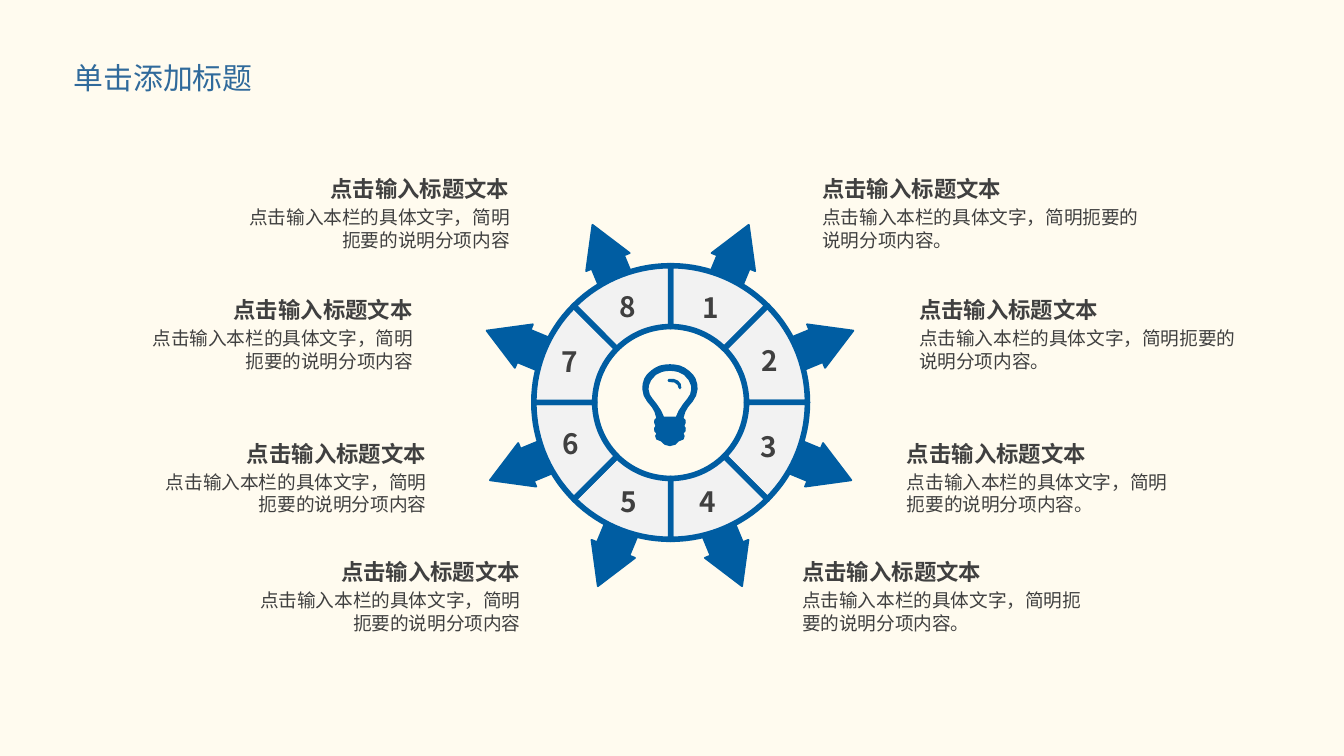
"""Build a slide with an eight-part idea wheel and a caption for each part."""
from math import cos, radians, sin

from lxml import etree
from pptx import Presentation
from pptx import util as u
from pptx.dml.color import RGBColor
from pptx.enum import text
from pptx.oxml.ns import qn

THEME = dict(font="Noto Sans CJK SC", paper="FFFBEF", blue="005DA2", title="306A9B",
             ring="F2F2F2", ink="404040", title_pt=16, head_pt=12, body_pt=10, num_pt=15)
COLS, ROWS = 100, 56.25
CELL = u.Inches(0.1)
CX, CY, INNER, OUTER = 49.9, 29.95, 5.65, 10.18
ARROW_CY = 30.17
HEAD, BODY = "点击输入标题文本", "点击输入本栏的具体文字，简明扼要的说明分项内容"
PARTS = [
    (60.2, 12.4, 26, 52.9, 22.9, 0.25), (67.4, 21.4, 26.7, 57.3, 26.8, 0.15),
    (66.5, 32.1, 22, 57.2, 33.2, 0), (58.7, 40.9, 23.8, 52.7, 37.3, -0.25),
    (17.6, 40.9, 22.1, 46.8, 37.3, 0.15), (11.1, 32.1, 21.6, 42.5, 33, 0),
    (10.1, 21.4, 21.6, 42.4, 26.9, -0.25), (17.3, 12.4, 21.6, 46.7, 22.8, -0.25),
]
ARROW = [(5.65, -1.3), (11.55, -1.3), (11.55, -1.75), (14.55, 0),
         (11.55, 1.75), (11.55, 1.3), (5.65, 1.3)]
BULB_X = 49.85
GLASS = [(0, 27.6), (0.3, 27.62), (0.6, 27.68), (1.05, 27.9), (1.4, 28.3), (1.57, 28.7),
         (1.58, 29), (1.5, 29.35), (1.3, 29.65), (0.95, 30.1), (0.65, 30.55), (0.45, 31)]
SHELL = [(0, 27.1), (0.4, 27.13), (0.75, 27.2), (1.1, 27.36), (1.4, 27.57), (1.7, 27.85),
         (1.9, 28.15), (2.03, 28.55), (2.06, 28.95), (1.95, 29.45), (1.7, 29.88),
         (1.35, 30.3), (1.15, 30.65), (1.02, 31.1), (1.16, 31.25), (1.18, 31.45),
         (1.08, 31.7), (1.18, 31.85), (1.16, 32.1), (1.02, 32.25), (1.1, 32.45),
         (1.02, 32.7), (0.65, 32.85), (0.4, 33.1), (0, 33.2)]
GLINT = [(49.75, 28.2), (50.15, 28.2), (50.45, 28.32), (50.65, 28.55), (50.7, 28.85),
         (50.6, 28.97), (50.48, 28.85), (50.42, 28.65), (50.2, 28.47), (49.75, 28.42),
         (49.67, 28.31)]


def draw(contours, fill, width=0):
    fb = None
    for pts in contours:
        pts = [(x * CELL, y * CELL) for x, y in pts]
        if fb is None:
            fb = s.shapes.build_freeform(*pts[0], scale=1.0)
        else:
            fb.move_to(*pts[0])
        fb.add_line_segments(pts[1:], close=True)
    sp = fb.convert_to_shape()
    sp.shadow.inherit = False
    sp.fill.solid()
    sp.fill.fore_color.rgb = RGBColor.from_string(THEME[fill])
    if width:
        sp.line.color.rgb = RGBColor.from_string(THEME["blue"])
        sp.line.width = u.Pt(width)
    else:
        sp.line.fill.background()


def write(sp, box, lines, align, color="ink"):
    sp.left, sp.top, sp.width, sp.height = (round(v * CELL) for v in box)
    tf = sp.text_frame
    tf.word_wrap = True
    tf.vertical_anchor = text.MSO_ANCHOR.MIDDLE
    tf.text = "\n".join(line for line, _, _ in lines)
    for p, (_, size, bold) in zip(tf.paragraphs, lines):
        p.alignment = align
        p.space_before = u.Pt(0.2 * THEME[size])
        f = p.runs[0].font
        f.name, f.size, f.bold = THEME["font"], u.Pt(THEME[size]), bold
        f.color.rgb = RGBColor.from_string(THEME[color])
        etree.SubElement(p.runs[0]._r.rPr, qn("a:ea")).set("typeface", THEME["font"])


prs = Presentation()
prs.slide_width, prs.slide_height = round(COLS * CELL), round(ROWS * CELL)
s = prs.slides.add_slide(prs.slide_layouts[5])
s.background.fill.solid()
s.background.fill.fore_color.rgb = RGBColor.from_string(THEME["paper"])
write(s.shapes.title, (4.5, 3.9, 19.3, 3.7), [("单击添加标题", "title_pt", False)],
      text.PP_ALIGN.LEFT, "title")

for i, (*_, dx) in enumerate(PARTS):
    start = 45 * i - 90
    a = radians(start + 22.5)
    draw([[(CX + dx + d * cos(a) - w * sin(a), ARROW_CY + d * sin(a) + w * cos(a))
           for d, w in ARROW]], "blue", 1)
    arc = [radians(start + 3 * k) for k in range(16)]
    draw([[(CX + OUTER * cos(t), CY + OUTER * sin(t)) for t in arc]
          + [(CX + INNER * cos(t), CY + INNER * sin(t)) for t in reversed(arc)]], "ring", 3)

draw([[(BULB_X + x, y) for x, y in half] + [(BULB_X - x, y) for x, y in reversed(half)]
      for half in (GLASS, SHELL)], "blue")
draw([GLINT], "blue")

for i, (x, y, w, nx, ny, _) in enumerate(PARTS):
    right = i < 4
    write(s.shapes.add_textbox(0, 0, 0, 0), (x, y, w, 6.9),
          [(HEAD, "head_pt", True), (BODY + "。" * right, "body_pt", False)],
          text.PP_ALIGN.LEFT if right else text.PP_ALIGN.RIGHT)
    write(s.shapes.add_textbox(0, 0, 0, 0), (nx - 2, ny - 1.1, 4, 2.2),
          [(str(i + 1), "num_pt", True)], text.PP_ALIGN.CENTER)

prs.save("out.pptx")
